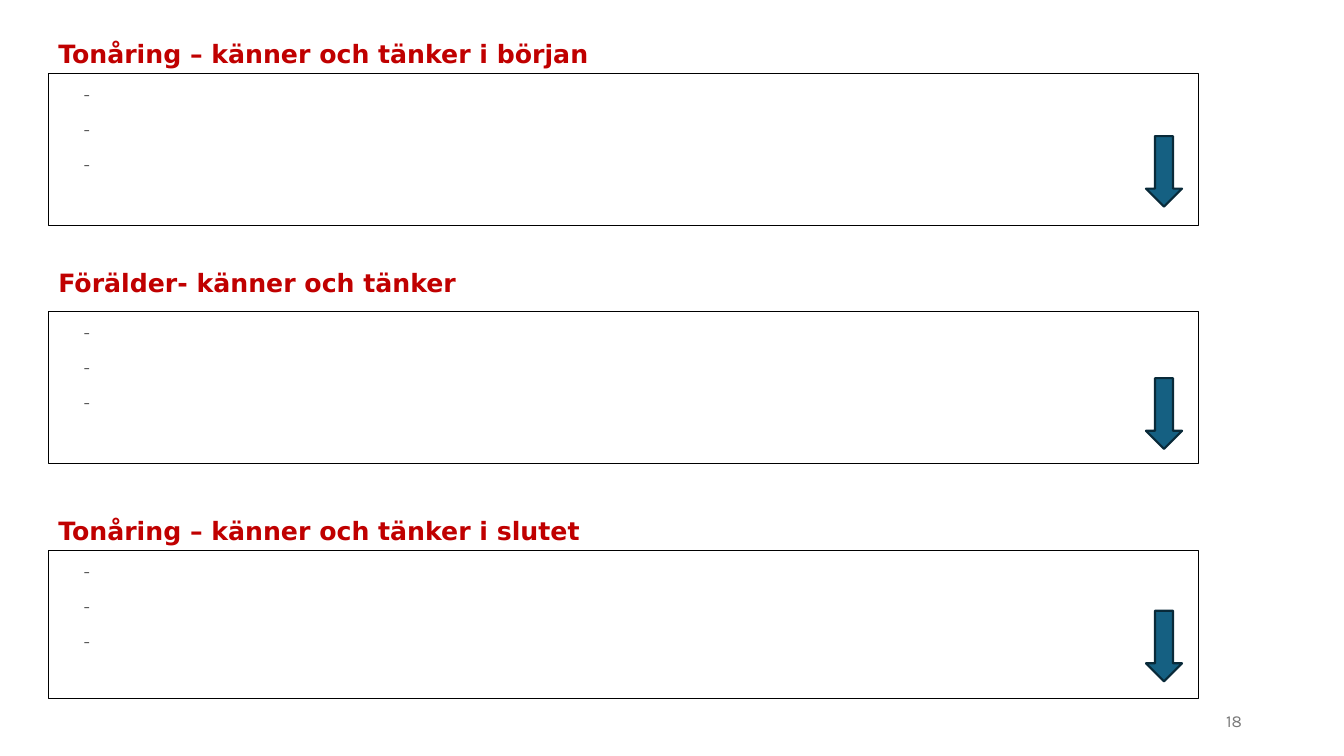
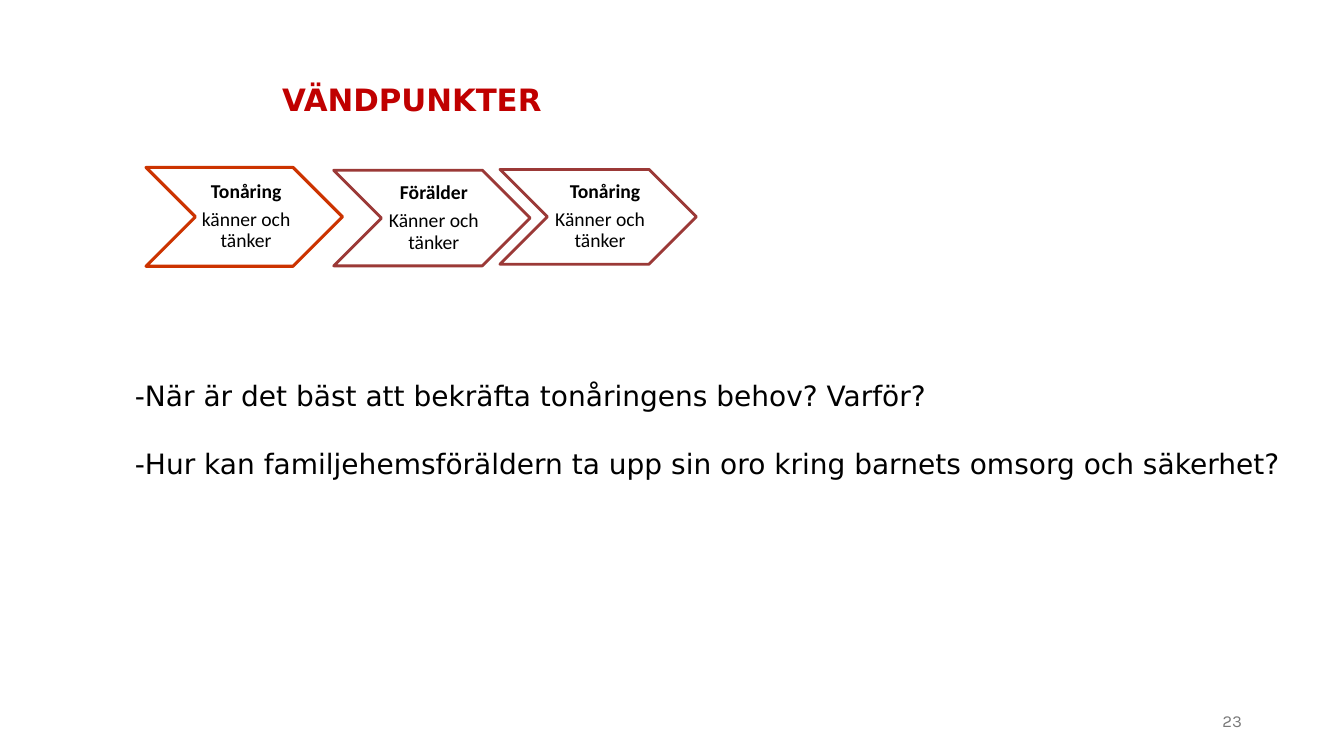
"""Build two slides on how a teenager and a parent feel and think."""
from pptx import Presentation
from pptx.dml.color import RGBColor
from pptx.enum.shapes import MSO_SHAPE as Kind
from pptx.enum.text import MSO_ANCHOR as Anchor, PP_ALIGN as Align
from pptx.util import Cm, Pt

HUES = {"red": "C00000", "black": "000000", "white": "FFFFFF", "dash": "595959",
        "teal": "156082", "edge": "092A39", "rust": "CC3300", "wine": "9B3937",
        "gray": "797979"}
SANS = "DejaVu Sans"
HEAD = {"font": SANS, "bold": True, "hue": "red"}

PANELS = [
    ("Tonåring – känner och tänker i början", 0.84, 1.85, 3.84, 3.43),
    ("Förälder- känner och tänker", 6.6, 7.85, 3.84, 9.53),
    ("Tonåring – känner och tänker i slutet", 12.85, 13.87, 3.73, 15.39),
]
DASHES = ["-"] * 3

TITLE = "VÄNDPUNKTER"
STEPS = [
    ("Tonåring", "känner och tänker", 3.68, 4.22, 2.49, "rust", 2.25, 0),
    ("Förälder", "Känner och tänker", 8.41, 4.29, 2.41, "wine", 2, 0),
    ("Tonåring", "Känner och tänker", 12.6, 4.27, 2.39, "wine", 2, 0.25),
]
ASKS = [
    "-När är det bäst att bekräfta tonåringens behov? Varför?",
    "-Hur kan familjehemsföräldern ta upp sin oro kring barnets omsorg och säkerhet?",
]


def tint(name):
    return RGBColor.from_string(HUES[name])


def write(shape, lines, size=18, font="Calibri", hue="black", bold=False, lead=False,
          align=Align.LEFT, anchor=Anchor.TOP, gap=0, pitch=1.0, pad=None,
          left=0, first=0, shift=0):
    """Fill a shape with formatted lines; lead makes only the first one bold."""
    frame = shape.text_frame
    frame.word_wrap = True
    frame.vertical_anchor = anchor
    if pad:
        (frame.margin_left, frame.margin_top,
         frame.margin_right, frame.margin_bottom) = map(Cm, pad)
    for i, line in enumerate(lines):
        para = frame.paragraphs[0] if i == 0 else frame.add_paragraph()
        para.alignment = align
        para.line_spacing = pitch
        para.space_after = Pt(gap)
        inset = left or (shift if i == 0 else 0)
        if inset:
            props = para._p.get_or_add_pPr()
            props.set("marL", str(int(Cm(inset))))
            props.set("indent", str(int(Cm(first))))
        run = para.add_run()
        run.text = line
        run.font.name = font
        run.font.size = Pt(size)
        run.font.bold = bold or (lead and i == 0)
        run.font.color.rgb = tint(hue)


def label(slide, box, lines, **style):
    write(slide.shapes.add_textbox(*map(Cm, box)), lines, **style)


def draw(slide, kind, box, fill, line, width):
    shape = slide.shapes.add_shape(kind, *map(Cm, box))
    shape.shadow.inherit = False
    if fill:
        shape.fill.solid()
        shape.fill.fore_color.rgb = tint(fill)
    else:
        shape.fill.background()
    shape.line.color.rgb = tint(line)
    shape.line.width = Pt(width)
    return shape


def start(deck, page):
    """Add a blank slide with its page number."""
    slide = deck.slides.add_slide(deck.slide_layouts[6])
    label(slide, (23.93, 17.65, 7.62, 1.02), [page], size=12, font="Karla",
          hue="gray", align=Align.RIGHT, anchor=Anchor.MIDDLE)
    return slide


def panels(deck):
    slide = start(deck, "18")
    for head, high, top, tall, tip in PANELS:
        box = draw(slide, Kind.RECTANGLE, (1.22, top, 28.98, tall), "white", "black", 0.75)
        write(box, DASHES, size=15, font="Cambria", hue="dash", gap=6, pitch=1.07,
              left=1.27, first=-0.64)
        label(slide, (1.22, high, 16.94, 1.02), [head], **HEAD)
        draw(slide, Kind.DOWN_ARROW, (28.88, tip, 0.91, 1.78), "teal", "edge", 1.5)


def turns(deck):
    slide = start(deck, "23")
    label(slide, (6.86, 2, 12, 1.02), [TITLE], size=22, anchor=Anchor.MIDDLE, **HEAD)
    for who, what, left, top, tall, hue, width, shift in STEPS:
        step = draw(slide, Kind.CHEVRON, (left, top, 4.95, tall), None, hue, width)
        write(step, [who, what], size=14, lead=True, align=Align.CENTER,
              anchor=Anchor.MIDDLE, gap=4.9, pitch=0.9,
              pad=(0.15, 0.05, 0.05, 0.05), shift=shift)
    label(slide, (3.15, 9.42, 30.18, 2.6), ASKS, size=20, font=SANS, gap=24.5)


def main():
    deck = Presentation()
    deck.slide_width, deck.slide_height = Cm(33.87), Cm(19.05)
    panels(deck)
    turns(deck)
    deck.save("out.pptx")


if __name__ == "__main__":
    main()
